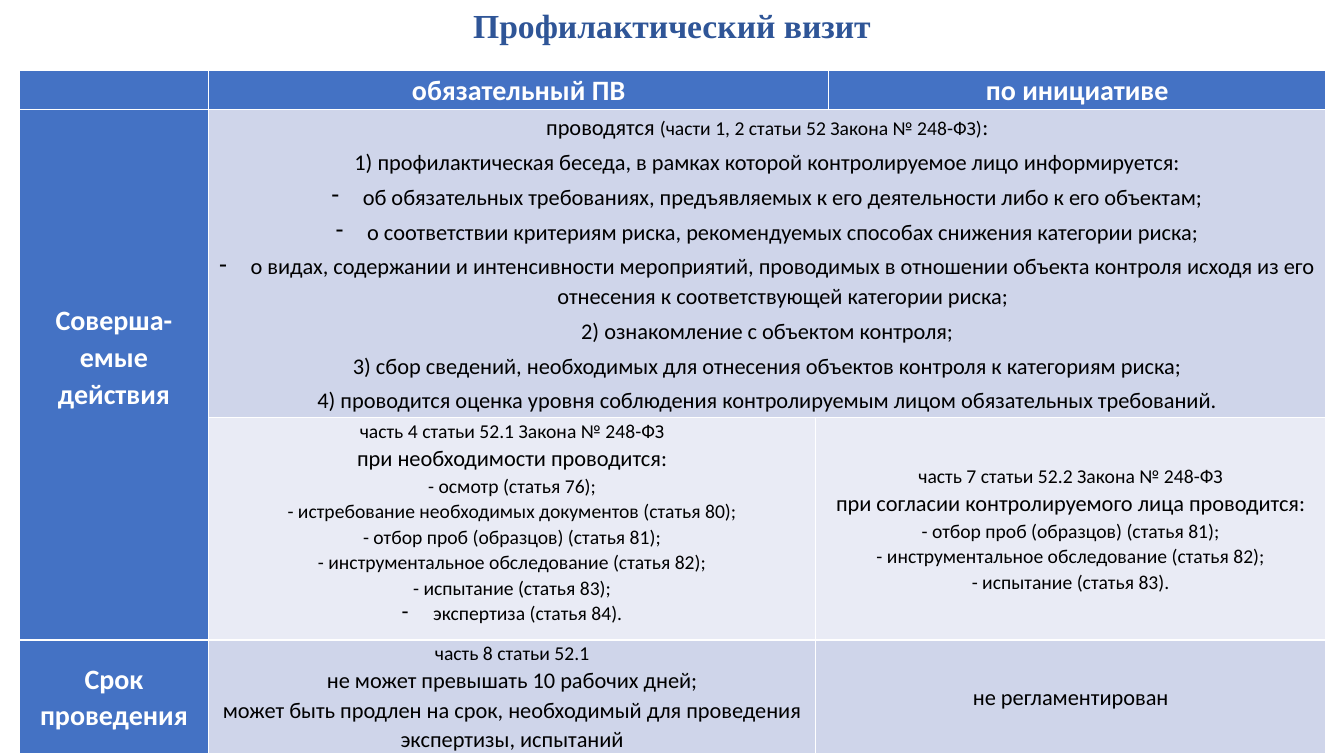
from lxml.etree import SubElement
from pptx import Presentation
from pptx.dml.color import RGBColor
from pptx.enum.text import MSO_ANCHOR as Anchor, PP_ALIGN as Align
from pptx.oxml.ns import qn
from pptx.util import Inches, Pt

BLUE, BAND, PALE = "4472C4", "CFD5EA", "E9EBF5"
BLACK, WHITE, TITLE_BLUE = "000000", "FFFFFF", "2F5597"
COLUMNS = [1.88, 6.02, 0.13, 4.93]
ROWS = [0.39, 3.05, 2.21, 1.12]
DASH = "• "

ACTIONS = [
    [("проводятся ", 16), ("(части 1, 2 статьи 52 Закона № 248-ФЗ)", 14), (":", 16)],
    "1) профилактическая беседа, в рамках которой контролируемое лицо информируется:",
    DASH + "об обязательных требованиях, предъявляемых к его деятельности либо к его объектам;",
    DASH + "о соответствии критериям риска, рекомендуемых способах снижения категории риска;",
    DASH + "о видах, содержании и интенсивности мероприятий, проводимых в отношении объекта "
    "контроля исходя из его отнесения к соответствующей категории риска;",
    "2) ознакомление с объектом контроля;",
    "3) сбор сведений, необходимых для отнесения объектов контроля к категориям риска;",
    "4) проводится оценка уровня соблюдения контролируемым лицом обязательных требований.",
]
MANDATORY_ACTIONS = [
    "часть 4 статьи 52.1 Закона № 248-ФЗ",
    [("при необходимости проводится:", 16)],
    "- осмотр (статья 76);",
    "- истребование необходимых документов (статья 80);",
    "- отбор проб (образцов) (статья 81);",
    "- инструментальное обследование (статья 82);",
    "- испытание (статья 83);",
    DASH + "экспертиза (статья 84).",
]
VOLUNTARY_ACTIONS = [
    "часть 7 статьи 52.2 Закона № 248-ФЗ",
    [("при согласии контролируемого лица проводится:", 16)],
    "- отбор проб (образцов) (статья 81);",
    "- инструментальное обследование (статья 82);",
    "- испытание (статья 83).",
]
MANDATORY_TERM = [
    [("часть 8 статьи 52.1", 14)],
    "не может превышать 10 рабочих дней;",
    "может быть продлен на срок, необходимый для проведения экспертизы, испытаний",
]


def rgb(code):
    """Turn a hex string into a colour."""
    return RGBColor.from_string(code)


def add_dash(paragraph):
    """Give a paragraph a hanging dash bullet."""
    properties = paragraph._p.get_or_add_pPr()
    properties.set("marL", str(Inches(0.31)))
    properties.set("indent", str(-Inches(0.31)))
    SubElement(properties, qn("a:buChar")).set("char", "-")


def write(frame, lines, size=16, color=BLACK, bold=False, font="Calibri", spacing=1.07, gap=0):
    """Fill a text frame with centred paragraphs of plain or mixed-size text."""
    frame.word_wrap = True
    for index, line in enumerate(lines):
        paragraph = frame.paragraphs[0] if index == 0 else frame.add_paragraph()
        paragraph.alignment = Align.CENTER
        paragraph.line_spacing = spacing
        paragraph.space_before = Pt(gap if index else 0)
        if isinstance(line, str) and line.startswith(DASH):
            add_dash(paragraph)
            line = line.removeprefix(DASH)
        for text, run_size in [(line, size)] if isinstance(line, str) else line:
            run = paragraph.add_run()
            run.text = text
            run.font.size = Pt(run_size)
            run.font.name = font
            run.font.bold = bold
            run.font.color.rgb = rgb(color)


def fill_cell(cell, lines, fill, bottom=0, **text_format):
    """Colour a table cell and write its centred text."""
    cell.fill.solid()
    cell.fill.fore_color.rgb = rgb(fill)
    cell.vertical_anchor = Anchor.MIDDLE
    cell.margin_left = cell.margin_right = Inches(0.04)
    cell.margin_top, cell.margin_bottom = 0, Inches(bottom)
    write(cell.text_frame, lines, **text_format)


def place_title(slide, left, top, width, height):
    """Set the slide title in the given box."""
    title = slide.shapes.title
    title.left, title.top = Inches(left), Inches(top)
    title.width, title.height = Inches(width), Inches(height)
    title.text_frame.vertical_anchor = Anchor.MIDDLE
    write(title.text_frame, ["Профилактический визит"], size=24, color=TITLE_BLUE,
          bold=True, font="Times New Roman", spacing=0.9)


def place_visit_table(slide, left, top):
    """Build the comparison of visit types from the given corner."""
    frame = slide.shapes.add_table(len(ROWS), len(COLUMNS), Inches(left), Inches(top),
                                   Inches(sum(COLUMNS)), Inches(sum(ROWS)))
    table = frame.table
    table.first_col = True
    for column, width in zip(table.columns, COLUMNS):
        column.width = Inches(width)
    for row, height in zip(table.rows, ROWS):
        row.height = Inches(height)
    cell = table.cell
    for start, end in [((0, 1), (0, 2)), ((1, 0), (2, 0)), ((1, 1), (1, 3)),
                       ((2, 2), (2, 3)), ((3, 2), (3, 3))]:
        cell(*start).merge(cell(*end))

    heading = {"fill": BLUE, "size": 20, "color": WHITE, "bold": True}
    fill_cell(cell(0, 0), [], BLUE)
    fill_cell(cell(0, 1), ["обязательный ПВ"], **heading)
    fill_cell(cell(0, 3), ["по инициативе"], **heading)
    fill_cell(cell(1, 0), ["Соверша-емые действия"], bottom=0.36, **heading)
    fill_cell(cell(3, 0), ["Срок проведения"], **heading)
    fill_cell(cell(1, 1), ACTIONS, BAND, gap=4)
    fill_cell(cell(2, 1), MANDATORY_ACTIONS, PALE, size=14, bottom=0.13)
    fill_cell(cell(2, 2), VOLUNTARY_ACTIONS, PALE, size=14)
    fill_cell(cell(3, 1), MANDATORY_TERM, BAND)
    fill_cell(cell(3, 2), ["не регламентирован"], BAND)


def main():
    """Build and save the slide."""
    deck = Presentation()
    deck.slide_width, deck.slide_height = Inches(13.33), Inches(7.5)
    slide = deck.slides.add_slide(deck.slide_layouts[5])
    place_title(slide, 0, 0, 13.33, 0.54)
    place_visit_table(slide, 0.19, 0.7)
    deck.save("out.pptx")


if __name__ == "__main__":
    main()
